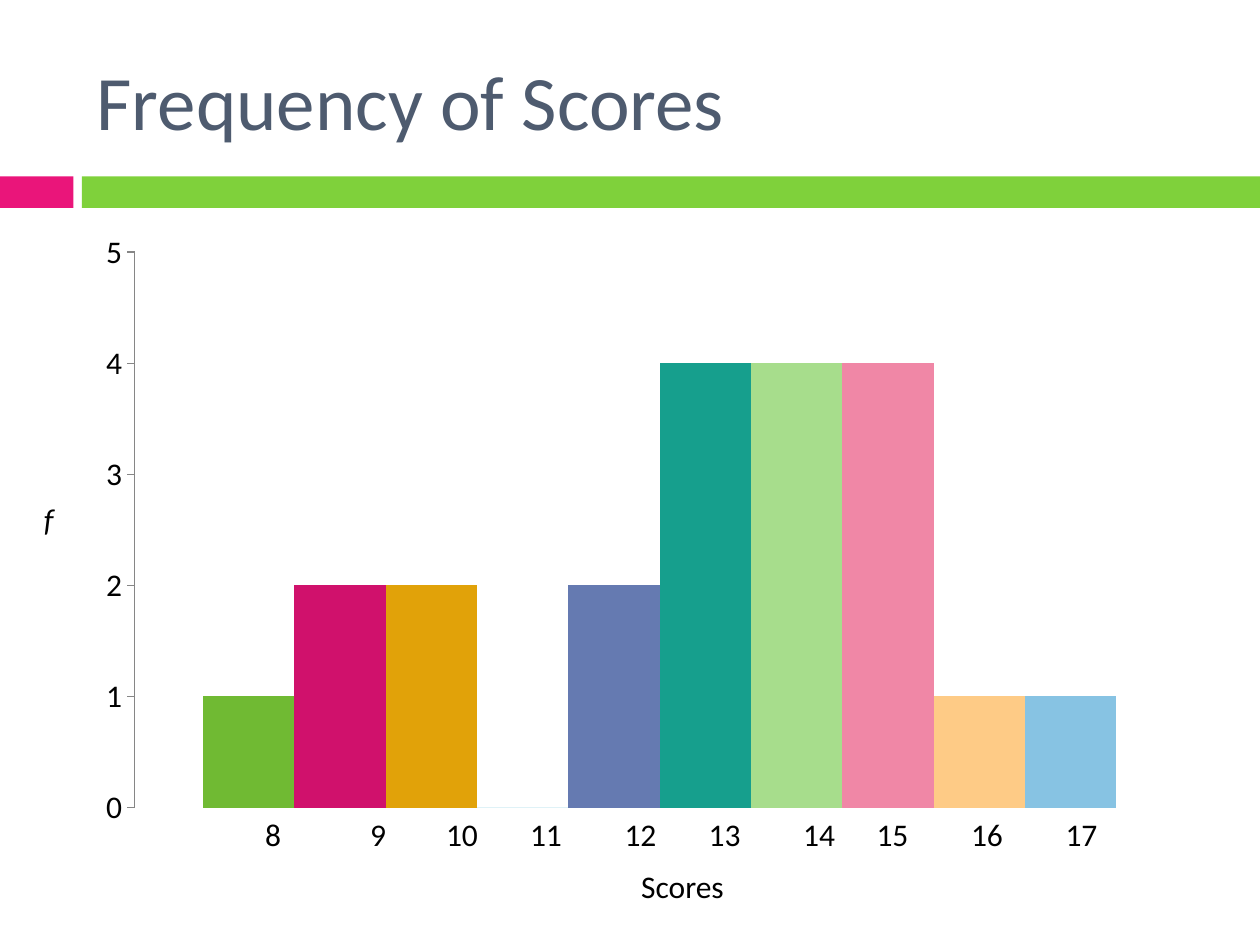
from lxml import etree
from pptx import Presentation
from pptx.chart.data import CategoryChartData
from pptx.dml.color import RGBColor
from pptx.enum.chart import XL_CHART_TYPE, XL_TICK_MARK
from pptx.enum.shapes import MSO_SHAPE
from pptx.enum.text import MSO_ANCHOR, PP_ALIGN
from pptx.util import Pt

COLUMNS = XL_CHART_TYPE.COLUMN_CLUSTERED
OUTSIDE, NO_TICK = XL_TICK_MARK.OUTSIDE, XL_TICK_MARK.NONE
RECTANGLE = MSO_SHAPE.RECTANGLE
MIDDLE = MSO_ANCHOR.MIDDLE
LEFT, CENTER = PP_ALIGN.LEFT, PP_ALIGN.CENTER

FONT = "Calibri"
TITLE = "Frequency of Scores"
BANDS = [(0, 42, "EA157A"), (46.8, 673.2, "7FD13B")]  # left, width, colour
SCORES = [  # score, frequency, bar colour, left edge of its label
    (8, 1, "70BA33", 126),
    (9, 2, "D0116C", 186),
    (10, 2, "E1A209", 234),
    (11, 0, "0099C3", 282),
    (12, 2, "657AB1", 336),
    (13, 4, "169F8D", 384),
    (14, 4, "A7DD8C", 438),
    (15, 4, "F087A6", 480),
    (16, 1, "FECB86", 534),
    (17, 1, "87C3E3", 588),
]
PLOT_LAYOUT = {"x": 0.045, "y": 0.051, "w": 0.935, "h": 0.897}


def color(hex_value):
    return RGBColor.from_string(hex_value)


def points(*lengths):
    return [Pt(length) for length in lengths]


def set_font(font, size, hex_value, italic=False):
    values = {"name": FONT, "size": Pt(size), "italic": italic}
    for name, value in values.items():
        setattr(font, name, value)
    font.color.rgb = color(hex_value)


def add_label(slide, text, box, alignment=CENTER, italic=False):
    frame = slide.shapes.add_textbox(*points(*box)).text_frame
    frame.word_wrap = True
    paragraph = frame.paragraphs[0]
    paragraph.text = text
    paragraph.alignment = alignment
    set_font(paragraph.runs[0].font, 18, "000000", italic)


def set_plot_layout(chart):
    """Fix the inner plot area as fractions of the chart."""
    plot_area = chart._chartSpace.chart.plotArea
    namespace = etree.QName(plot_area).namespace
    for old in plot_area.findall(f"{{{namespace}}}layout"):
        plot_area.remove(old)
    layout = etree.Element(f"{{{namespace}}}layout")
    manual = etree.SubElement(layout, f"{{{namespace}}}manualLayout")
    settings = {"layoutTarget": "inner", "xMode": "edge", "yMode": "edge", **PLOT_LAYOUT}
    for name, value in settings.items():
        etree.SubElement(manual, f"{{{namespace}}}{name}").set("val", str(value))
    plot_area.insert(0, layout)


def add_frequency_chart(slide):
    data = CategoryChartData()
    data.categories = ["1"]
    for number, (_, frequency, _, _) in enumerate(SCORES, 1):
        data.add_series(f"Series {number}", [frequency])
    chart = slide.shapes.add_chart(COLUMNS, *points(48, 126, 642, 354), data).chart
    chart.has_legend = False
    chart.has_title = False
    set_font(chart.font, 18, "000000")
    set_plot_layout(chart)

    plot = chart.plots[0]
    plot.gap_width, plot.overlap = 150, 0
    plot.vary_by_categories = False
    for series, (_, _, bar_color, _) in zip(plot.series, SCORES):
        series.format.fill.solid()
        series.format.fill.fore_color.rgb = color(bar_color)

    chart.category_axis.visible = False
    axis = chart.value_axis
    axis_values = {
        "minimum_scale": 0, "maximum_scale": 5, "major_unit": 1,
        "has_major_gridlines": False,
        "major_tick_mark": OUTSIDE, "minor_tick_mark": NO_TICK,
    }
    for name, value in axis_values.items():
        setattr(axis, name, value)
    axis.format.line.color.rgb = color("868686")
    axis.format.line.width = Pt(0.75)


def main():
    presentation = Presentation()
    presentation.slide_width, presentation.slide_height = points(720, 540)
    slide = presentation.slides.add_slide(presentation.slide_layouts[5])

    title = slide.shapes.title
    title.left, title.top, title.width, title.height = points(48, 18, 642, 78)
    title.text = TITLE
    title.text_frame.vertical_anchor = MIDDLE
    paragraph = title.text_frame.paragraphs[0]
    paragraph.alignment = LEFT
    set_font(paragraph.runs[0].font, 44, "4E5B6F")

    for left, width, band_color in BANDS:
        band = slide.shapes.add_shape(RECTANGLE, *points(left, 100.8, width, 18))
        band.shadow.inherit = False
        band.fill.solid()
        band.fill.fore_color.rgb = color(band_color)
        band.line.fill.background()

    add_frequency_chart(slide)
    for score, _, _, left in SCORES:
        add_label(slide, str(score), (left, 462, 60, 30))
    add_label(slide, "Scores", (144, 492, 492, 29))
    add_label(slide, "f", (18, 282, 36, 29), LEFT, italic=True)
    presentation.save("out.pptx")


if __name__ == "__main__":
    main()
